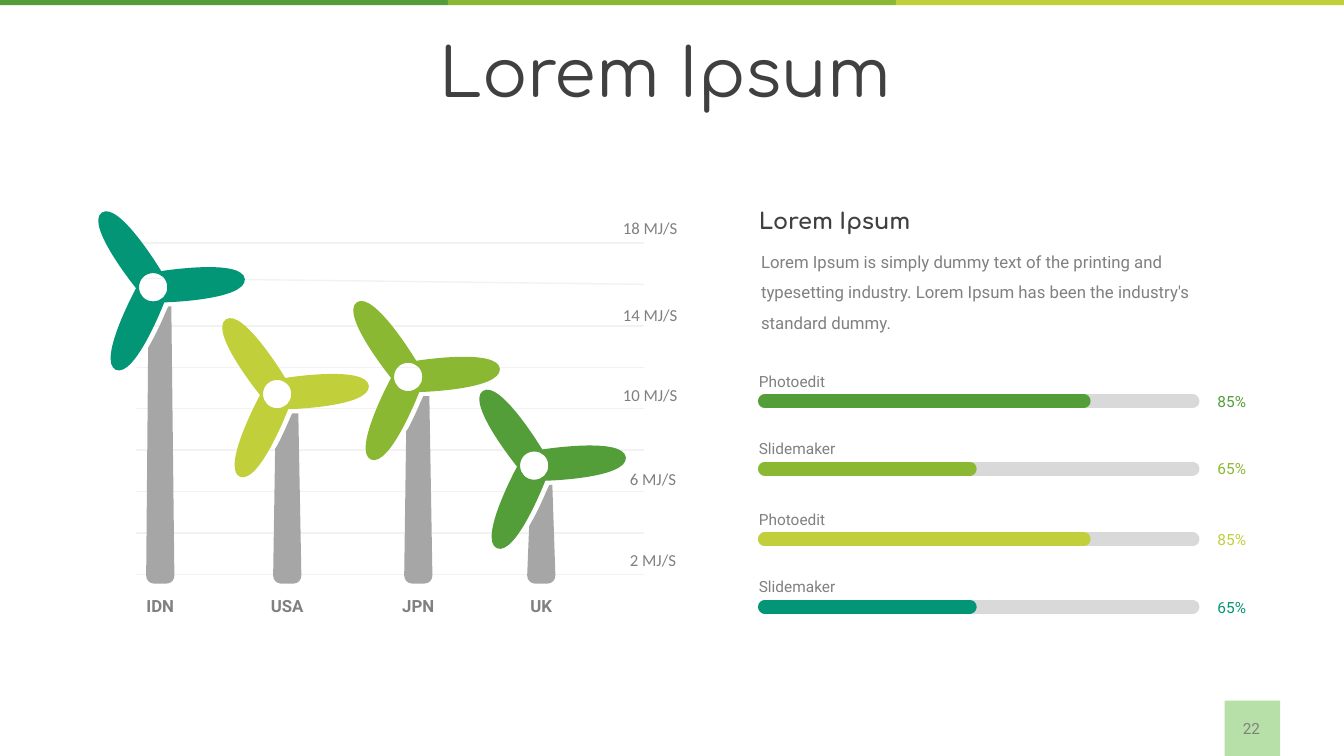
from dataclasses import dataclass

from lxml import etree
from pptx import Presentation
from pptx.dml.color import RGBColor
from pptx.enum.shapes import MSO_CONNECTOR, MSO_SHAPE
from pptx.enum.text import MSO_ANCHOR, MSO_AUTO_SIZE, PP_ALIGN
from pptx.oxml.ns import qn
from pptx.util import Inches, Pt

LEFT, CENTER = PP_ALIGN.LEFT, PP_ALIGN.CENTER
TOP = MSO_ANCHOR.TOP
GROW = MSO_AUTO_SIZE.SHAPE_TO_FIT_TEXT
RECTANGLE = MSO_SHAPE.RECTANGLE
STRAIGHT = MSO_CONNECTOR.STRAIGHT

GREEN = RGBColor(0x54, 0x9E, 0x39)
LEAF = RGBColor(0x8A, 0xB8, 0x33)
LIME = RGBColor(0xC0, 0xCF, 0x3A)
TEAL = RGBColor(0x02, 0x96, 0x76)
PALE_GREEN = RGBColor(0xB7, 0xE0, 0xA8)
DARK = RGBColor(0x40, 0x40, 0x40)
GRAY = RGBColor(0x80, 0x80, 0x80)
TOWER_GRAY = RGBColor(0xA6, 0xA6, 0xA6)
TRACK_GRAY = RGBColor(0xD9, 0xD9, 0xD9)
GRID_GRAY = RGBColor(0xF2, 0xF2, 0xF2)

Point = tuple[float, float]
Curve = tuple[Point, Point, Point]  # two control points and the end point


@dataclass
class Contour:
    start: Point
    curves: list[Curve]


@dataclass
class Turbine:
    country: str
    color: RGBColor
    hub: Point
    tower_left: float
    tower_top: float
    cut: float  # where the slanted tower top bends, from the tower's left


@dataclass
class Skill:
    name: str
    percent: str
    color: RGBColor
    y: float
    end: float


@dataclass
class ScaleMark:
    text: str
    left: float
    top: float


TURBINES = [
    Turbine("JPN", LEAF, (4.05, 3.74), 4.01, 3.93, 0.04),
    Turbine("USA", LIME, (2.75, 3.91), 2.71, 4.10, 0.04),
    Turbine("UK", GREEN, (5.30, 4.62), 5.23, 4.81, 0.07),
    Turbine("IDN", TEAL, (1.52, 2.85), 1.45, 3.04, 0.07),
]
SKILLS = [
    Skill("Photoedit", "85%", GREEN, 3.98, 10.75),
    Skill("Slidemaker", "65%", LEAF, 4.65, 9.62),
    Skill("Photoedit", "85%", LIME, 5.35, 10.75),
    Skill("Slidemaker", "65%", TEAL, 6.02, 9.62),
]
SCALE_MARKS = [
    ScaleMark("2 MJ/S", 6.15, 5.40),
    ScaleMark("6 MJ/S", 6.15, 4.60),
    ScaleMark("10 MJ/S", 6.08, 3.77),
    ScaleMark("14 MJ/S", 6.08, 2.97),
    ScaleMark("18 MJ/S", 6.08, 2.11),
]

# Rotor outline around the centre of its hub
BLADES = Contour((-0.51, -0.74), [
    ((-0.34, -0.86), (0.08, -0.16), (0.08, -0.16)),
    ((0.08, -0.16), (0.89, -0.29), (0.91, -0.08)),
    ((0.92, 0.13), (0.11, 0.15), (0.11, 0.15)),
    ((0.11, 0.15), (-0.18, 0.90), (-0.37, 0.82)),
    ((-0.56, 0.73), (-0.17, 0.01), (-0.17, 0.01)),
    ((-0.17, 0.01), (-0.68, -0.62), (-0.51, -0.74)),
])
R, K = 0.14, 0.08  # hub radius and the reach of its control points
HUB = Contour((0, R), [
    ((K, R), (R, K), (R, 0)),
    ((R, -K), (K, -R), (0, -R)),
    ((-K, -R), (-R, -K), (-R, 0)),
    ((-R, K), (-K, R), (0, R)),
])
TOWER_WIDTH, TOWER_BASE, CORNER = 0.28, 5.79, 0.08


def straight(end: Point) -> Curve:
    return end, end, end


def add_outline(slide, contours: list[Contour], origin: Point, color: RGBColor) -> None:
    def place(point: Point) -> tuple[int, int]:
        return Inches(origin[0] + point[0]), Inches(origin[1] + point[1])

    builder = slide.shapes.build_freeform(*place(contours[0].start))
    for index, contour in enumerate(contours):
        if index:
            builder.move_to(*place(contour.start))
        builder.add_line_segments([place(p) for curve in contour.curves for p in curve])
    shape = builder.convert_to_shape()

    # Join every three segments into one Bézier curve and close each contour
    outline = next(shape._element.iter(qn("a:path")))
    segments = outline.findall(qn("a:lnTo"))
    for first, second, last in zip(*[iter(segments)] * 3):
        bezier = etree.Element(qn("a:cubicBezTo"))
        first.addprevious(bezier)
        for segment in (first, second, last):
            bezier.append(segment[0])
            outline.remove(segment)
    for move in outline.findall(qn("a:moveTo"))[1:]:
        move.addprevious(etree.Element(qn("a:close")))
    etree.SubElement(outline, qn("a:close"))
    paint(shape, color)


def paint(shape, color: RGBColor) -> None:
    shape.shadow.inherit = False
    shape.fill.solid()
    shape.fill.fore_color.rgb = color
    shape.line.fill.background()


def add_block(slide, left: float, top: float, width: float, height: float,
              color: RGBColor) -> None:
    paint(slide.shapes.add_shape(RECTANGLE, Inches(left), Inches(top),
                                 Inches(width), Inches(height)), color)


def add_line(slide, start: Point, end: Point, color: RGBColor, width: float,
             rounded: bool = False) -> None:
    line = slide.shapes.add_connector(STRAIGHT, *map(Inches, start + end))
    line.line.color.rgb = color
    line.line.width = Pt(width)
    properties = line._element.spPr
    if rounded:
        properties.find(qn("a:ln")).set("cap", "rnd")
    etree.SubElement(properties, qn("a:effectLst"))


def fill_text(frame, text: str, size: float, color: RGBColor, font: str = "Roboto",
              bold: bool = False, align=LEFT, wrap: bool = False) -> None:
    frame.text = text
    frame.word_wrap = wrap
    frame.auto_size = GROW
    frame.vertical_anchor = TOP
    paragraph = frame.paragraphs[0]
    paragraph.alignment = align
    run_font = paragraph.runs[0].font
    run_font.name, run_font.size, run_font.bold = font, Pt(size), bold
    run_font.color.rgb = color


def add_text(slide, left: float, top: float, width: float, height: float,
             text: str, size: float, color: RGBColor, **style):
    box = slide.shapes.add_textbox(Inches(left), Inches(top), Inches(width), Inches(height))
    fill_text(box.text_frame, text, size, color, **style)
    return box.text_frame


def add_turbine(slide, turbine: Turbine) -> None:
    # Tower, with a slanted top and rounded feet
    base = TOWER_BASE - turbine.tower_top
    cut, right = turbine.cut, TOWER_WIDTH
    tower = Contour((cut, 0.32), [
        ((cut + 0.07, 0.19), (cut + 0.12, 0.06), (cut + 0.15, 0)),
        straight((0.25, 0)),
        straight((right, base - CORNER)),
        ((right, base - 0.04), (right - 0.03, base), (right - CORNER, base)),
        straight((CORNER, base)),
        ((0.03, base), (0, base - 0.04), (0, base - CORNER)),
        straight((0.02, 0.27 + 2 * cut)),
        straight((cut, 0.32)),
    ])
    add_outline(slide, [tower], (turbine.tower_left, turbine.tower_top), TOWER_GRAY)
    add_outline(slide, [BLADES, HUB], turbine.hub, turbine.color)
    add_text(slide, turbine.tower_left + TOWER_WIDTH / 2 - 0.27, 5.86, 0.54, 0.3,
             turbine.country, 12, GRAY, bold=True, align=CENTER)


def add_skill(slide, skill: Skill) -> None:
    for end, color in ((11.83, TRACK_GRAY), (skill.end, skill.color)):
        add_line(slide, (7.59, skill.y), (end, skill.y), color, 10, rounded=True)
    add_text(slide, 7.43, skill.y - 0.34, 0.99, 0.29, skill.name, 11, GRAY)
    add_text(slide, 11.98, skill.y - 0.14, 0.51, 0.29, skill.percent, 11, skill.color)


def main() -> None:
    deck = Presentation()
    deck.slide_width, deck.slide_height = Inches(40 / 3), Inches(7.5)
    slide = deck.slides.add_slide(deck.slide_layouts[5])

    # Top band and page number
    band = 40 / 9
    for index, color in enumerate((GREEN, LEAF, LIME)):
        add_block(slide, index * band, 0, band, 0.05, color)
    add_block(slide, 12.15, 6.95, 0.55, 0.55, PALE_GREEN)
    add_text(slide, 12.22, 7.08, 0.39, 0.29, "22", 11, GRAY, align=CENTER)

    # Title
    title = slide.shapes.title
    title.left, title.top = Inches(4.22), Inches(0.25)
    title.width, title.height = Inches(4.76), Inches(0.91)
    fill_text(title.text_frame, "Lorem Ipsum", 48, DARK, font="Comfortaa", align=CENTER)

    # Turbine chart: grid, turbines, scale
    for index in range(9):
        y = 5.70 - index * 3.29 / 8
        left_y = 2.76 if index == 7 else y
        add_line(slide, (6.39, y), (1.35, left_y), GRID_GRAY, 1)
    for turbine in TURBINES:
        add_turbine(slide, turbine)
    for mark in SCALE_MARKS:
        add_text(slide, mark.left, mark.top, 6.83 - mark.left, 0.3, mark.text, 12, GRAY,
                 font="Calibri")

    # Description and skill bars
    description = add_text(
        slide, 7.55, 2.4, 4.28, 0.87,
        "Lorem Ipsum is simply dummy text of the printing and typesetting industry. "
        "Lorem Ipsum has been the industry's standard dummy.", 12, GRAY, wrap=True)
    description.margin_left = description.margin_right = 0
    description.margin_top = description.margin_bottom = 0
    description.paragraphs[0].line_spacing = 1.5
    for skill in SKILLS:
        add_skill(slide, skill)
    add_text(slide, 7.43, 2.01, 1.73, 0.37, "Lorem Ipsum", 16, DARK,
             font="Comfortaa", bold=True)

    deck.save("out.pptx")


if __name__ == "__main__":
    main()
